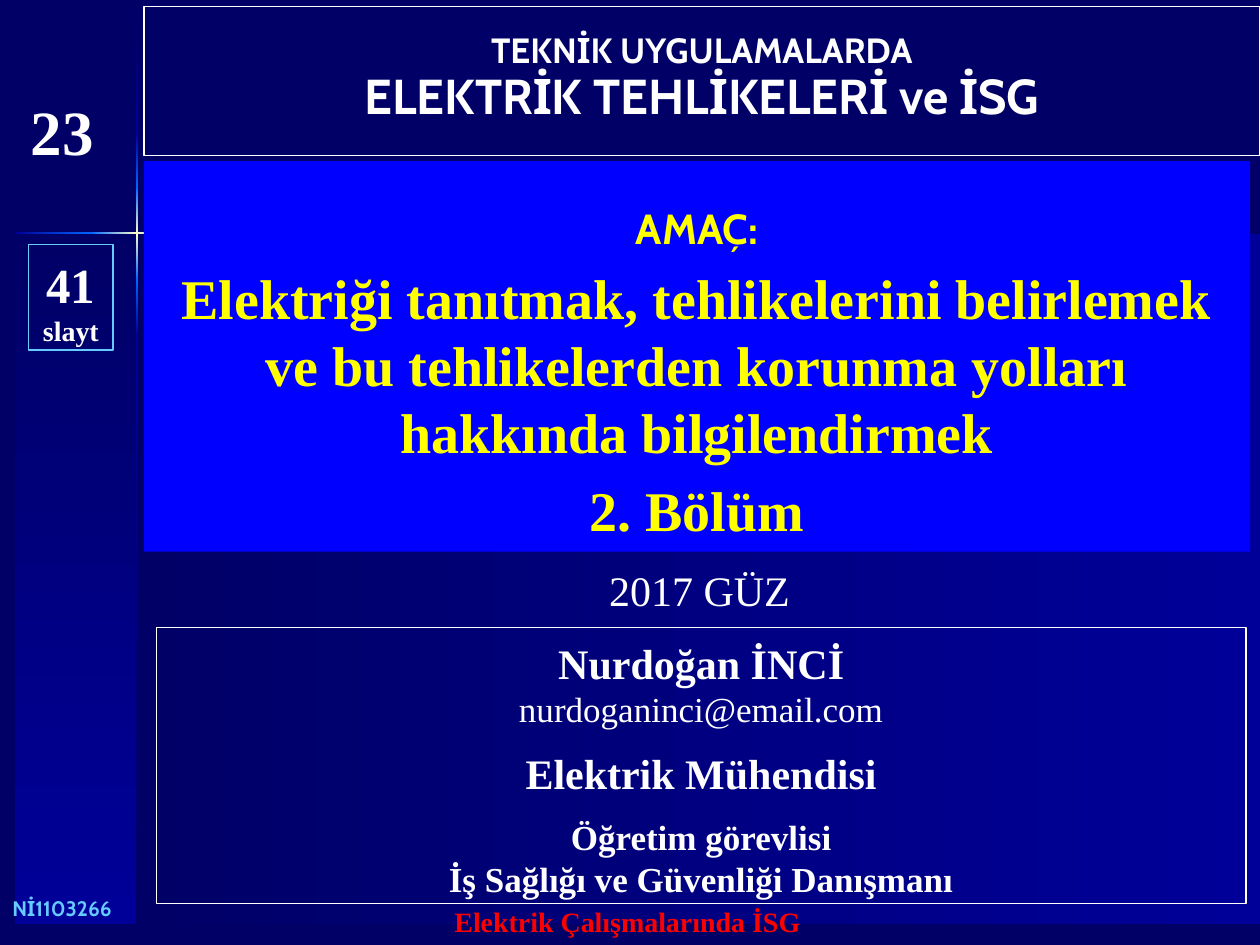
from lxml import etree
from pptx import Presentation
from pptx import util as u
from pptx.dml.color import RGBColor
from pptx.enum import shapes, text
from pptx.oxml.ns import qn

COLORS = {"navy": "000066", "blue": "000099", "glow": "0066FF", "cream": "FFFFCC",
          "panel": "0000FF", "yellow": "FFFF00", "white": "FFFFFF",
          "sky": "66CCFF", "red": "FF0000"}
SERIF, SANS = "Times New Roman", "Cabin"


def rgb(name):
    return RGBColor.from_string(COLORS[name])


def write(box, paragraphs, color, font=SERIF, top=0.13, align=text.PP_ALIGN.CENTER):
    """Each paragraph is (space before, runs); each run is (words, size, bold[, font])."""
    frame = box.text_frame
    frame.word_wrap = True
    frame.auto_size = text.MSO_AUTO_SIZE.NONE
    frame.vertical_anchor = text.MSO_ANCHOR.TOP
    frame.margin_top = u.Cm(top)
    for i, (before, runs) in enumerate(paragraphs):
        p = frame.paragraphs[0] if i == 0 else frame.add_paragraph()
        p.alignment = align
        p.space_before = u.Pt(before)
        for words, size, bold, *face in runs:
            r = p.add_run()
            r.text = words
            r.font.size, r.font.bold = u.Pt(size), bold
            r.font.name = face[0] if face else font
            r.font.color.rgb = rgb(color)


prs = Presentation()
prs.slide_width, prs.slide_height = u.Cm(25.4), u.Cm(19.05)
slide = prs.slides.add_slide(prs.slide_layouts[0])
slide.background.fill.solid()
slide.background.fill.fore_color.rgb = rgb("navy")

# Backdrop: gradient panels and the glowing cross; 270 runs downwards
DOWN, RIGHT = 270, 0
rise, glow, shine = ("navy", "blue"), ("blue", "glow"), ("glow", "cream", "glow")
backdrop = [
    (2.7, 4.7, 22.7, 13.93, RIGHT, rise),
    (0.3, 4.7, 2.46, 13.93, DOWN, rise),
    (2.74, 0, 0.05, 2.67, DOWN, rise),
    (2.74, 6.76, 0.05, 11.88, DOWN, rise[::-1]),
    (4.8, 4.67, 20.6, 0.05, RIGHT, rise[::-1]),
    (2.74, 5.64, 0.05, 1.12, DOWN, glow[::-1]),
    (2.74, 2.67, 0.05, 1.11, DOWN, glow),
    (2.74, 3.78, 0.05, 1.86, DOWN, shine),
    (0.3, 4.67, 1.55, 0.05, RIGHT, glow),
    (1.83, 4.67, 1.85, 0.05, RIGHT, shine),
]
for left, top, width, height, angle, stops in backdrop:
    band = slide.shapes.add_shape(shapes.MSO_SHAPE.RECTANGLE, u.Cm(left), u.Cm(top),
                                  u.Cm(width), u.Cm(height))
    band.shadow.inherit = False
    band.line.fill.background()
    band.fill.gradient()
    band.fill.gradient_angle = angle
    stop_list = next(band._element.iter(qn("a:gsLst")))
    for old in list(stop_list):
        stop_list.remove(old)
    for i, name in enumerate(stops):
        stop = etree.SubElement(stop_list, qn("a:gs"), pos=str(i * 100000 // (len(stops) - 1)))
        etree.SubElement(stop, qn("a:srgbClr"), val=COLORS[name])

# Course heading and aim, brought in front of the backdrop
heading, aim = slide.shapes.title, slide.placeholders[1]
for part, (left, top, width, height) in ((heading, (2.9, 0.13, 22.5, 3)),
                                         (aim, (2.9, 3.25, 22.3, 7.87))):
    slide.shapes._spTree.append(part._element)
    part.left, part.top, part.width, part.height = map(u.Cm, (left, top, width, height))

heading.line.color.rgb = rgb("white")
heading.line.width = u.Pt(0.75)
write(heading, [(0, [("TEKNİK UYGULAMALARDA", 20, True)]),
                (0, [("ELEKTRİK TEHLİKELERİ ve İSG", 28, True)])], "white", SANS, top=0.44)
heading.text_frame.paragraphs[1].line_spacing = 0.94

aim.fill.solid()
aim.fill.fore_color.rgb = rgb("panel")
write(aim, [(0, [("AMAÇ:", 24, True, SANS)]),
            (6, [("Elektriği tanıtmak, tehlikelerini belirlemek ve bu tehlikelerden "
                  "korunma yolları hakkında bilgilendirmek", 32, True)]),
            (6, [("2. Bölüm", 32, True)])], "yellow", top=0.83)

# Framed boxes: lecturer and slide count
lecturer = [(0, [("Nurdoğan İNCİ", 24, True)]),
            (0, [("nurdoganinci@email.com", 20, False)]),
            (10, [("Elektrik Mühendisi", 24, True)]),
            (10, [("Öğretim görevlisi", 20, True)]),
            (0, [("İş Sağlığı ve Güvenliği Danışmanı", 20, True)])]
slide_count = [(0, [("41 ", 28, True), ("slayt", 16, True)])]
for left, top, width, height, outline, words in (
        (3.15, 12.65, 21.97, 5.56, "white", lecturer),
        (0.58, 4.93, 1.7, 2.13, "sky", slide_count)):
    frame = slide.shapes.add_shape(shapes.MSO_SHAPE.RECTANGLE, u.Cm(left), u.Cm(top),
                                   u.Cm(width), u.Cm(height))
    frame.shadow.inherit = False
    frame.fill.background()
    frame.line.color.rgb = rgb(outline)
    frame.line.width = u.Pt(0.75)
    write(frame, words, "white", top=0.2)

# Plain labels: slide number, term, footer, document code
CENTER, LEFT = text.PP_ALIGN.CENTER, text.PP_ALIGN.LEFT
for left, top, width, height, words, size, bold, color, font, align in (
        (0.2, 1.73, 2.11, 1.78, "23", 36, True, "white", SERIF, CENTER),
        (6.3, 11.25, 15.6, 1.27, "2017 GÜZ", 24, False, "white", SERIF, CENTER),
        (8.79, 18.11, 7.72, 0.94, "Elektrik Çalışmalarında İSG", 16, True, "red", SERIF, CENTER),
        (0, 17.93, 5.28, 0.71, "Nİ1103266", 12, True, "sky", SANS, LEFT)):
    label = slide.shapes.add_textbox(u.Cm(left), u.Cm(top), u.Cm(width), u.Cm(height))
    write(label, [(0, [(words, size, bold)])], color, font, align=align)

prs.save("out.pptx")
